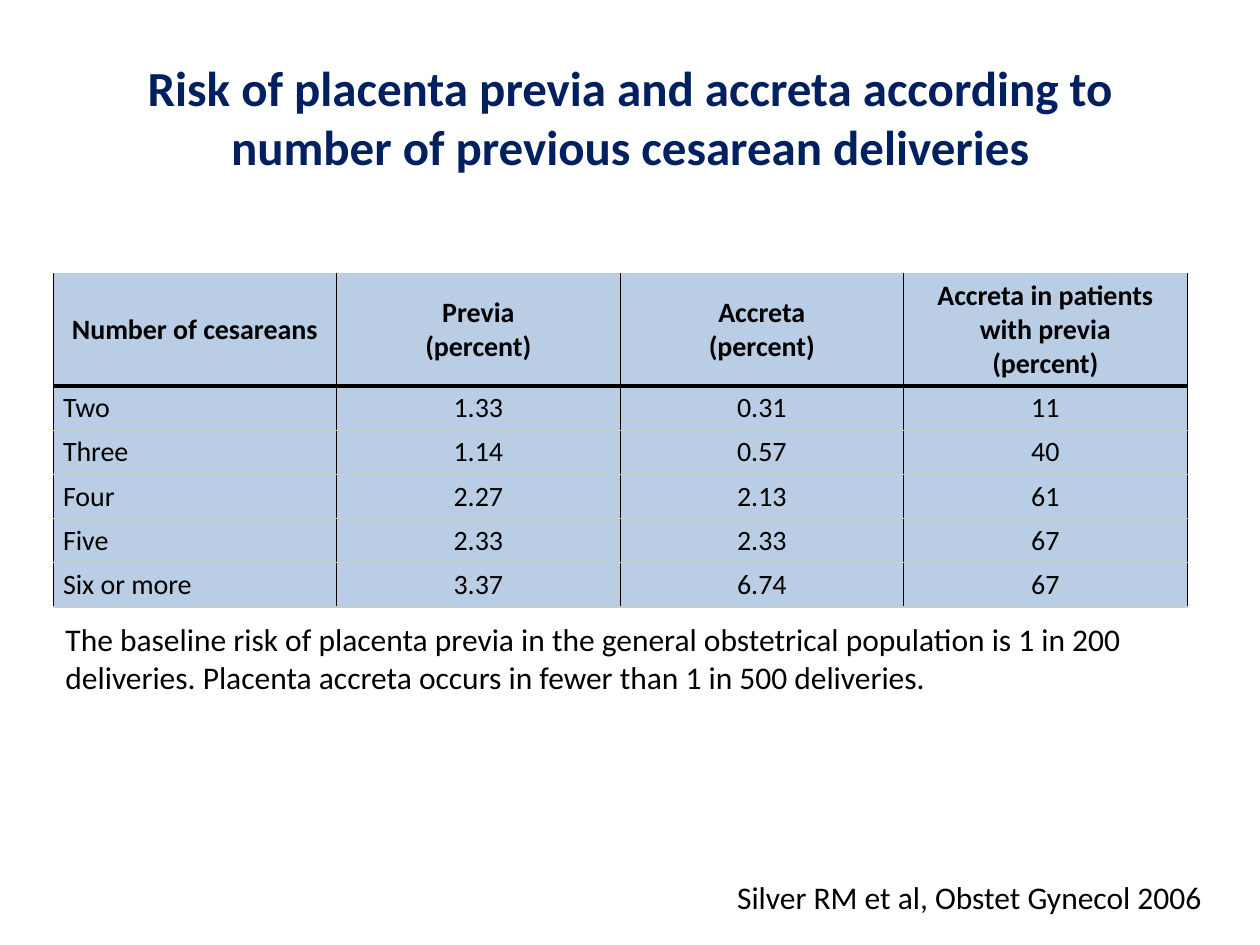
import dataclasses

import lxml.etree
import pptx
import pptx.dml.color
import pptx.enum.text
import pptx.oxml.ns
import pptx.util

Cm = pptx.util.Cm
ALIGN = pptx.enum.text.PP_ALIGN
ANCHOR = pptx.enum.text.MSO_ANCHOR


@dataclasses.dataclass(frozen=True)
class Theme:
    font: str = "Calibri"
    title_color: str = "002060"
    text_color: str = "000000"
    cell_fill: str = "B9CDE5"
    grid_color: str = "000000"
    row_line_color: str = "CCCCCC"
    thin_line: float = 0.75
    header_line: float = 2.25
    title_size: int = 28
    note_size: int = 18
    table_size: int = 16


THEME = Theme()

TITLE = "Risk of placenta previa and accreta according to number of previous cesarean deliveries"
HEADER = (
    "Number of cesareans",
    "Previa\v(percent)",
    "Accreta\v(percent)",
    "Accreta in patients with previa\v(percent)",
)
RISKS = (
    ("Two", "1.33", "0.31", "11"),
    ("Three", "1.14", "0.57", "40"),
    ("Four", "2.27", "2.13", "61"),
    ("Five", "2.33", "2.33", "67"),
    ("Six or more", "3.37", "6.74", "67"),
)
BASELINE = (
    "The baseline risk of placenta previa in the general obstetrical population "
    "is 1 in 200 deliveries. Placenta accreta occurs in fewer than 1 in 500 deliveries."
)
CITATION = "Silver RM et al, Obstet Gynecol 2006"


def rgb(color):
    return pptx.dml.color.RGBColor.from_string(color)


def write(para, text, size, color=THEME.text_color, bold=False, align=ALIGN.LEFT):
    para.text = text
    para.alignment = align
    para.font.name = THEME.font
    para.font.size = pptx.util.Pt(size)
    para.font.bold = bold
    para.font.color.rgb = rgb(color)


def add_border(cell, side, color, width):
    properties = cell._tc.get_or_add_tcPr()
    name = pptx.oxml.ns.qn(f"a:ln{side}")
    line = lxml.etree.SubElement(properties, name, w=str(pptx.util.Pt(width)))
    if color is None:
        lxml.etree.SubElement(line, pptx.oxml.ns.qn("a:noFill"))
        return
    fill = lxml.etree.SubElement(line, pptx.oxml.ns.qn("a:solidFill"))
    lxml.etree.SubElement(fill, pptx.oxml.ns.qn("a:srgbClr"), val=color)


def style_cell(cell, row):
    thin = THEME.thin_line
    header_rule = (THEME.grid_color, THEME.header_line)
    row_rule = (THEME.row_line_color, thin)
    top = {0: (None, thin), 1: header_rule}.get(row, row_rule)
    bottom = header_rule if row == 0 else row_rule
    add_border(cell, "L", THEME.grid_color, thin)
    add_border(cell, "R", THEME.grid_color, thin)
    add_border(cell, "T", *top)
    add_border(cell, "B", *bottom)
    cell.fill.solid()
    cell.fill.fore_color.rgb = rgb(THEME.cell_fill)
    cell.vertical_anchor = ANCHOR.MIDDLE
    cell.margin_left = cell.margin_right = Cm(0.2)
    cell.margin_top = cell.margin_bottom = Cm(0.1)


def place_title(page, left, top, width, height):
    title = page.shapes.title
    title.left, title.top, title.width, title.height = left, top, width, height
    title.text_frame.word_wrap = True
    title.text_frame.vertical_anchor = ANCHOR.MIDDLE
    write(title.text_frame.paragraphs[0], TITLE, THEME.title_size,
          THEME.title_color, True, ALIGN.CENTER)


def add_risk_table(page, left, top, width, header_height, row_height):
    rows = (HEADER, *RISKS)
    height = header_height + row_height * len(RISKS)
    table = page.shapes.add_table(len(rows), len(HEADER), left, top, width, height).table
    table.first_row = False
    table.horz_banding = False
    table.rows[0].height = header_height
    for row, texts in enumerate(rows):
        for column, text in enumerate(texts):
            cell = table.cell(row, column)
            style_cell(cell, row)
            is_label = row > 0 and column == 0
            write(cell.text_frame.paragraphs[0], text, THEME.table_size, bold=row == 0,
                  align=ALIGN.LEFT if is_label else ALIGN.CENTER)
    for row in list(table.rows)[1:]:
        row.height = row_height


def add_note(page, text, left, top, width, height, wrap=True):
    box = page.shapes.add_textbox(left, top, width, height)
    box.text_frame.word_wrap = wrap
    box.text_frame.auto_size = pptx.enum.text.MSO_AUTO_SIZE.SHAPE_TO_FIT_TEXT
    write(box.text_frame.paragraphs[0], text, THEME.note_size)


def main():
    deck = pptx.Presentation()
    deck.slide_width, deck.slide_height = Cm(25.4), Cm(19.05)
    page = deck.slides.add_slide(deck.slide_layouts.get_by_name("Title Only"))
    place_title(page, Cm(1.27), Cm(0.76), Cm(22.86), Cm(3.18))
    add_risk_table(page, Cm(1.07), Cm(5.51), Cm(22.86), Cm(2.03), Cm(0.81))
    add_note(page, BASELINE, Cm(1.07), Cm(12.37), Cm(23.06), Cm(1.8))
    add_note(page, CITATION, Cm(14.61), Cm(17.58), Cm(9.98), Cm(1.02), wrap=False)
    deck.save("out.pptx")


if __name__ == "__main__":
    main()
